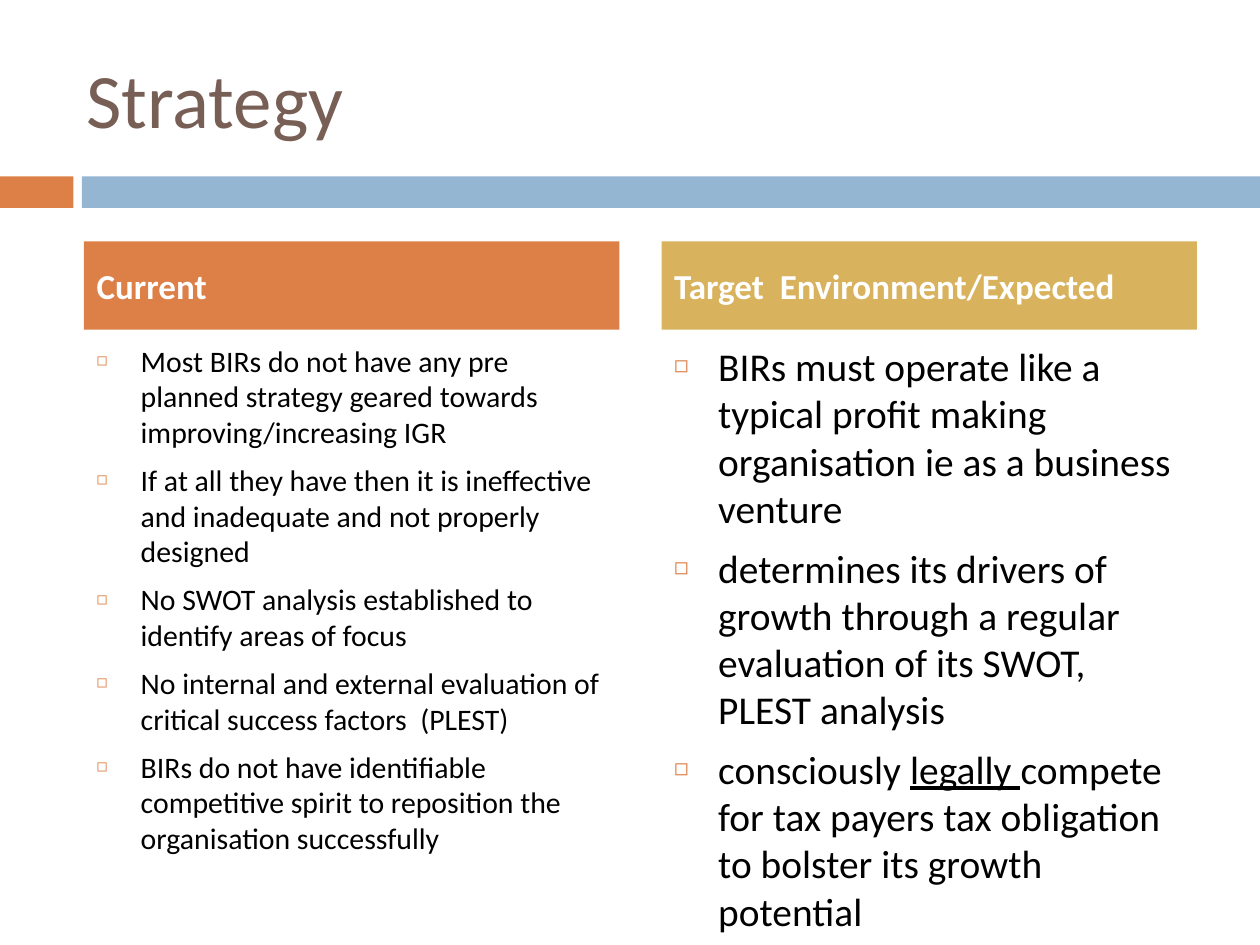
from lxml.etree import SubElement
from pptx import Presentation
from pptx.dml.color import RGBColor
from pptx.enum.shapes import MSO_SHAPE
from pptx.enum.text import MSO_ANCHOR, MSO_AUTO_SIZE, PP_ALIGN
from pptx.oxml.ns import qn
from pptx.util import Pt

# Content: a paragraph is a list of (text, underlined) runs
HEADING = "Strategy"
COLUMNS = [
    {
        "header": "Current", "fill": "DD8047", "size": 17,
        "points": [
            [("Most BIRs do not have any pre planned strategy geared towards improving/increasing IGR", False)],
            [("If at all they have then it is ineffective and inadequate and not properly designed", False)],
            [("No SWOT analysis established to identify areas of focus", False)],
            [("No internal and external evaluation of critical success factors  (PLEST)", False)],
            [("BIRs do not have identifiable competitive spirit to reposition the organisation successfully", False)],
        ],
    },
    {
        "header": "Target  Environment/Expected", "fill": "D8B25C", "size": 22.5,
        "points": [
            [("BIRs must operate like a typical profit making organisation ie as a business venture", False)],
            [("determines its drivers of growth through a regular evaluation of its SWOT, PLEST analysis", False)],
            [("consciously ", False), ("legally ", True),
             ("compete for tax payers tax obligation to bolster its growth potential", False)],
        ],
    },
]

# Layout, in points
SLIDE_W, SLIDE_H = 720, 540
BAND_TOP, BAND_H, BAND_SPLIT, BAND_GAP = 100.8, 18, 42, 4.8
COLUMN_LEFT, COLUMN_W, COLUMN_STEP = 48, 306, 330
HEADER_TOP, HEADER_H = 138, 50.4
LIST_TOP, LIST_H = 192, 282
INDENT, PARAGRAPH_GAP = 25.2, 7
ACCENT = "DD8047"

HEADING_FORMAT = {"size": Pt(44), "name": "Calibri", "bold": False}
HEADER_FORMAT = {"size": Pt(20), "name": "Calibri", "bold": True}


def paint(target, color):
    target.solid()
    target.fore_color.rgb = RGBColor.from_string(color)


def place(shape, left, top, width, height):
    shape.left, shape.top, shape.width, shape.height = map(Pt, (left, top, width, height))


def set_frame(placeholder, anchor):
    frame = placeholder.text_frame
    frame.auto_size = MSO_AUTO_SIZE.NONE
    frame.word_wrap = True
    frame.vertical_anchor = anchor
    return frame


def add_run(paragraph, text, color, font_format):
    run = paragraph.add_run()
    run.text = text
    for attribute, value in font_format.items():
        setattr(run.font, attribute, value)
    paint(run.font.fill, color)


def add_bullet(paragraph):
    properties = paragraph._p.get_or_add_pPr()
    properties.set("marL", str(Pt(INDENT)))
    properties.set("indent", str(-Pt(INDENT)))
    bullet_color = SubElement(properties, qn("a:buClr"))
    SubElement(bullet_color, qn("a:srgbClr"), val=ACCENT)
    SubElement(properties, qn("a:buSzPct"), val="60000")
    SubElement(properties, qn("a:buChar"), char="◻")


presentation = Presentation()
presentation.slide_width, presentation.slide_height = Pt(SLIDE_W), Pt(SLIDE_H)
slide = presentation.slides.add_slide(presentation.slide_layouts.get_by_name("Comparison"))
title, *column_parts = slide.placeholders

# Band under the title
blue_left = BAND_SPLIT + BAND_GAP
for left, width, color in [(0, BAND_SPLIT, ACCENT), (blue_left, SLIDE_W - blue_left, "94B6D2")]:
    band = slide.shapes.add_shape(
        MSO_SHAPE.RECTANGLE, Pt(left), Pt(BAND_TOP), Pt(width), Pt(BAND_H))
    band.shadow.inherit = False
    paint(band.fill, color)
    band.line.fill.background()

# Title
place(title, 42, 21.6, 642, 68.4)
heading = set_frame(title, MSO_ANCHOR.MIDDLE).paragraphs[0]
heading.alignment = PP_ALIGN.LEFT
add_run(heading, HEADING, "775F55", HEADING_FORMAT)

# Columns: coloured header above a bulleted list
for index, column in enumerate(COLUMNS):
    header, points = column_parts[2 * index:2 * index + 2]
    left = COLUMN_LEFT + index * COLUMN_STEP

    place(header, left, HEADER_TOP, COLUMN_W, HEADER_H)
    paint(header.fill, column["fill"])
    label = set_frame(header, MSO_ANCHOR.MIDDLE).paragraphs[0]
    label.space_before = Pt(PARAGRAPH_GAP)
    add_run(label, column["header"], "FFFFFF", HEADER_FORMAT)

    place(points, left, LIST_TOP, COLUMN_W, LIST_H)
    frame = set_frame(points, MSO_ANCHOR.TOP)
    for number, runs in enumerate(column["points"]):
        paragraph = frame.add_paragraph() if number else frame.paragraphs[0]
        paragraph.space_before = Pt(PARAGRAPH_GAP)
        add_bullet(paragraph)
        for text, underlined in runs:
            add_run(paragraph, text, "000000",
                    {"size": Pt(column["size"]), "name": "Calibri", "underline": underlined})

presentation.save("out.pptx")
